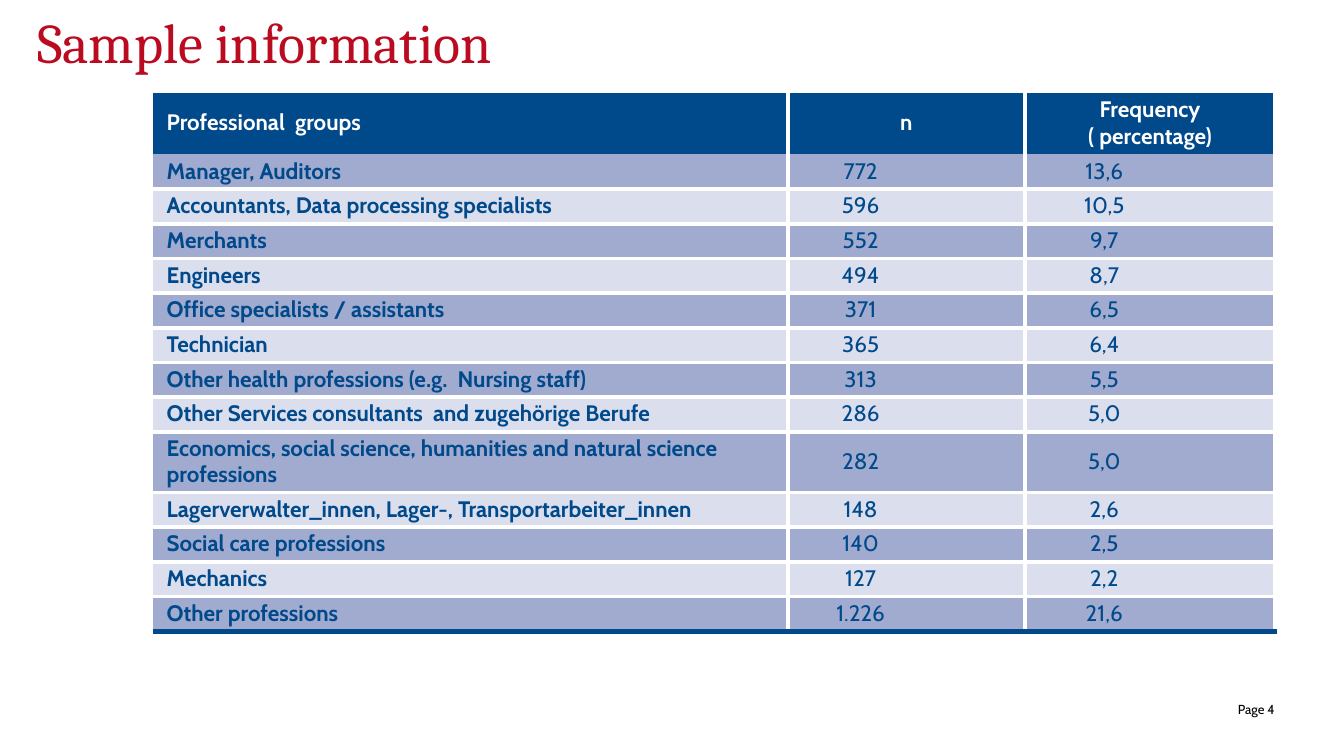
from lxml import etree
from pptx import Presentation
from pptx.dml.color import RGBColor
from pptx.enum.text import MSO_ANCHOR, PP_ALIGN
from pptx.oxml.ns import qn
from pptx.util import Cm, Pt

LEFT, CENTER, RIGHT, JUSTIFY = PP_ALIGN.LEFT, PP_ALIGN.CENTER, PP_ALIGN.RIGHT, PP_ALIGN.JUSTIFY
TOP, MIDDLE = MSO_ANCHOR.TOP, MSO_ANCHOR.MIDDLE
NO_STYLE = "{2D5ABB26-0587-4C30-8999-92F81FD0307C}"

TITLE = "Sample information"
PAGE = "Page 4"
HEADER = ("Professional  groups", "n", "Frequency\n( percentage)")
GROUPS = [
    ("Manager, Auditors", "772", "13,6"),
    ("Accountants, Data processing specialists", "596", "10,5"),
    ("Merchants", "552", "9,7"),
    ("Engineers", "494", "8,7"),
    ("Office specialists / assistants", "371", "6,5"),
    ("Technician", "365", "6,4"),
    ("Other health professions (e.g.  Nursing staff)", "313", "5,5"),
    ("Other Services consultants  and zugehörige Berufe", "286", "5,0"),
    ("Economics, social science, humanities and natural science professions", "282", "5,0"),
    ("Lagerverwalter_innen, Lager-, Transportarbeiter_innen", "148", "2,6"),
    ("Social care professions", "140", "2,5"),
    ("Mechanics", "127", "2,2"),
    ("Other professions", "1.226", "21,6"),
]
COLORS = {"title": "BB0B20", "navy": "00498B", "dark band": "A1ABCF",
          "light band": "DBDEED", "white": "FFFFFF", "black": "000000"}
BODY_FONT, TITLE_FONT = "Cabin", "Cambria"
COL_WIDTHS = (11.99, 4.48, 4.73)
HEADER_HEIGHT, ROW_HEIGHT, TWO_LINE_HEIGHT = 1.17, 0.65, 1.14
TWO_LINE_LENGTH = 60
NUMBER_MARGIN = 1.73


def rgb(name):
    return RGBColor.from_string(COLORS[name])


def format_paragraph(p, font, size, color, align, bold=False):
    p.alignment = align
    p.font.name, p.font.size, p.font.bold = font, Pt(size), bold
    p.font.color.rgb = rgb(color)


def set_margins(target, left=0, top=0, right=0, bottom=0):
    target.margin_left, target.margin_top = Cm(left), Cm(top)
    target.margin_right, target.margin_bottom = Cm(right), Cm(bottom)


def add_borders(cell, borders):
    """Borders map a side (L, R, T, B, in that order) to a colour and a width."""
    tcPr = cell._tc.get_or_add_tcPr()
    for side, (color, width) in borders.items():
        ln = etree.SubElement(tcPr, qn(f"a:ln{side}"), w=str(Pt(width)))
        fill = etree.SubElement(ln, qn("a:solidFill"))
        etree.SubElement(fill, qn("a:srgbClr"), val=COLORS[color])


def cell_borders(row, col, last_row):
    white = ("white", 2.25)
    borders = {"L": white} if col else {}
    borders["R"] = white
    if row > 1:
        borders["T"] = white
    if row:
        borders["B"] = ("navy", 3) if row == last_row else white
    return borders


def fill_cell(cell, text, row, col, last_row):
    header, label = row == 0, col == 0
    add_borders(cell, cell_borders(row, col, last_row))
    cell.fill.solid()
    cell.fill.fore_color.rgb = rgb("navy" if header else "dark band" if row % 2 else "light band")
    cell.vertical_anchor = TOP if label and not header else MIDDLE
    set_margins(cell, top=0.08, bottom=0.08,
                right=0 if header or label else NUMBER_MARGIN)
    p = cell.text_frame.paragraphs[0]
    p.text = text
    p.line_spacing = Pt(14)
    align = CENTER if not label else JUSTIFY if header else LEFT
    format_paragraph(p, BODY_FONT, 12, "white" if header else "navy", align, header or label)
    if label:
        p._p.get_or_add_pPr().set("marL", str(Cm(0.25)))


def add_groups_table(s):
    rows = [HEADER] + GROUPS
    heights = [HEADER_HEIGHT] + [
        TWO_LINE_HEIGHT if len(group[0]) > TWO_LINE_LENGTH else ROW_HEIGHT for group in GROUPS]
    frame = s.shapes.add_table(len(rows), len(HEADER), Cm(2.9), Cm(1.75),
                               Cm(sum(COL_WIDTHS)), Cm(sum(heights)))
    table = frame.table
    table.first_row = table.horz_banding = False
    table._tbl.tblPr.find(qn("a:tableStyleId")).text = NO_STYLE
    for column, width in zip(table.columns, COL_WIDTHS):
        column.width = Cm(width)
    for i, (texts, height) in enumerate(zip(rows, heights)):
        table.rows[i].height = Cm(height)
        for j, text in enumerate(texts):
            fill_cell(table.cell(i, j), text, i, j, len(GROUPS))


def main():
    prs = Presentation()
    prs.slide_width, prs.slide_height = Cm(25.4), Cm(14.29)
    s = prs.slides.add_slide(prs.slide_layouts[5])

    title = s.shapes.title
    title.left, title.top, title.width, title.height = Cm(0.7), Cm(0.15), Cm(22.8), Cm(2.4)
    tf = title.text_frame
    tf.text = TITLE
    tf.vertical_anchor = TOP
    set_margins(tf)
    format_paragraph(tf.paragraphs[0], TITLE_FONT, 30, "title", LEFT)

    add_groups_table(s)

    tf = s.shapes.add_textbox(Cm(21.55), Cm(13.13), Cm(2.54), Cm(0.4)).text_frame
    tf.word_wrap = True
    tf.text = PAGE
    set_margins(tf, top=0.13)
    format_paragraph(tf.paragraphs[0], BODY_FONT, 7, "black", RIGHT)

    prs.save("out.pptx")


if __name__ == "__main__":
    main()
